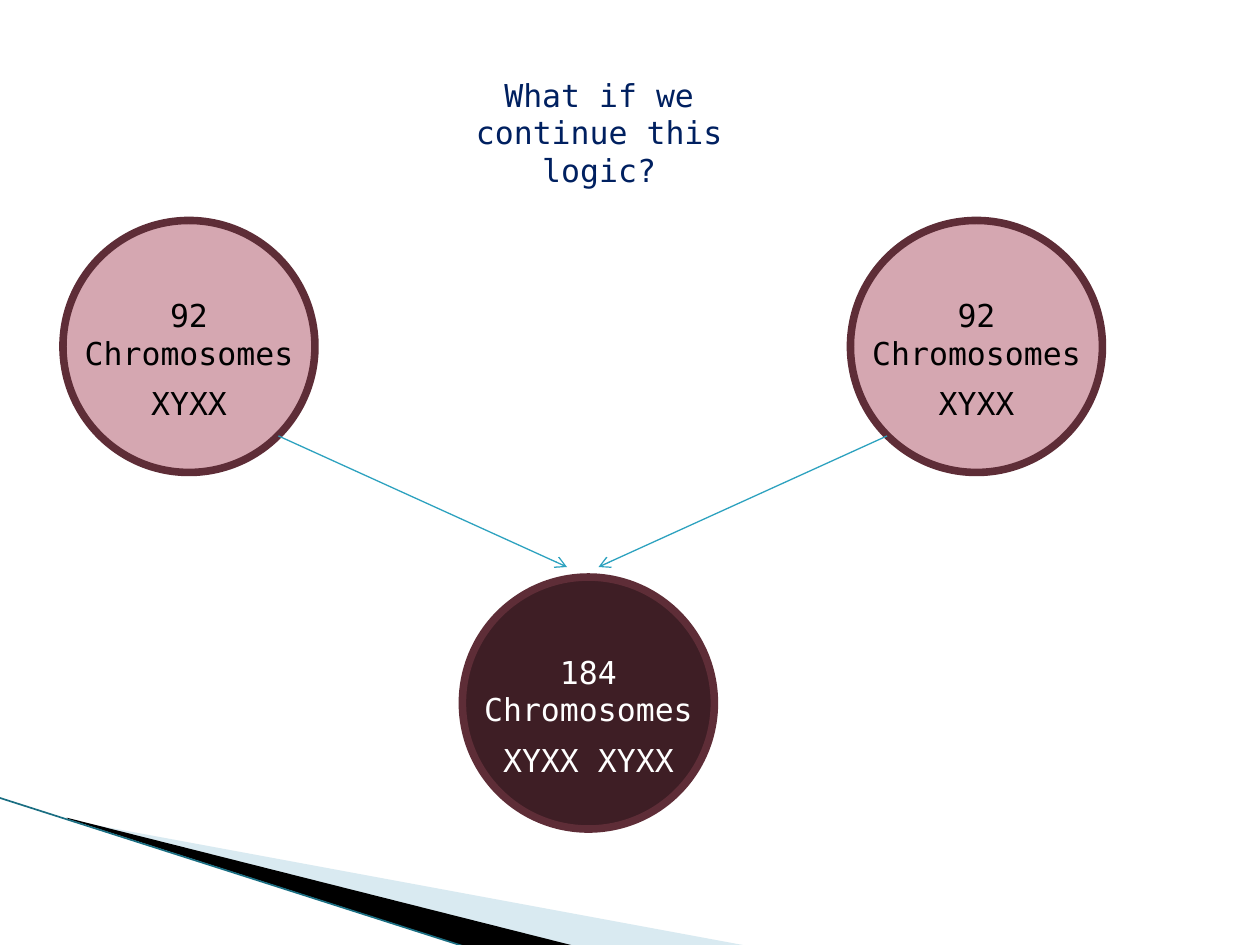
import pptx
import pptx.util
import pptx.dml.color
import pptx.enum.shapes
import pptx.enum.text
import pptx.oxml
import pptx.oxml.ns

RGBColor = pptx.dml.color.RGBColor
PX = 9144  # EMU in one px, 100 px to the inch
FONT = "DejaVu Sans Mono"
BLACK = RGBColor(0x00, 0x00, 0x00)
WHITE = RGBColor(0xFF, 0xFF, 0xFF)
NAVY = RGBColor(0x00, 0x20, 0x60)
PINK = RGBColor(0xD5, 0xA7, 0xB1)
MAROON = RGBColor(0x5E, 0x2D, 0x37)
DARK_MAROON = RGBColor(0x3E, 0x1E, 0x25)
PALE_BLUE = RGBColor(0xA0, 0xCB, 0xDC)
TEAL = RGBColor(0x2D, 0xA2, 0xBF)
DARK_TEAL = RGBColor(0x1A, 0x6E, 0x82)
CELL_SIZE = 200


def px(*lengths):
    return [pptx.util.Emu(length * PX) for length in lengths]


def add_xml_child(parent, tag, **attributes):
    child = pptx.oxml.parse_xml(f"<{tag} {pptx.oxml.ns.nsdecls('a')}/>")
    for name, value in attributes.items():
        child.set(name, value)
    parent.append(child)


def write_text(box, text, color):
    """Fill a box with one centred line of text that wraps at the box width."""
    frame = box.text_frame
    frame.word_wrap = True
    frame.auto_size = pptx.enum.text.MSO_AUTO_SIZE.SHAPE_TO_FIT_TEXT
    frame.vertical_anchor = pptx.enum.text.MSO_ANCHOR.TOP
    para = frame.paragraphs[0]
    para.alignment = pptx.enum.text.PP_ALIGN.CENTER
    para.line_spacing = 1.0
    span = para.add_run()
    span.text = text
    span.font.name = FONT
    span.font.size = pptx.util.Pt(18)
    span.font.color.rgb = color


def add_title(page, text):
    title = page.shapes.title
    title.left, title.top, title.width, title.height = px(342, 55, 267, 71)
    write_text(title, text, NAVY)


def add_label(page, left, top, width, height, text, color):
    box = page.shapes.add_textbox(*px(left, top, width, height))
    write_text(box, text, color)


def add_cell(page, left, top, count, sex, sex_width, fill, text_color):
    """Draw a round cell with its chromosome count and sex chromosomes."""
    cell = page.shapes.add_shape(pptx.enum.shapes.MSO_SHAPE.OVAL,
                                 *px(left, top, CELL_SIZE, CELL_SIZE))
    cell.shadow.inherit = False
    cell.fill.solid()
    cell.fill.fore_color.rgb = fill
    cell.line.color.rgb = MAROON
    cell.line.width = pptx.util.Pt(4.33)
    add_label(page, left, top + 55, CELL_SIZE, 71, count, text_color)
    sex_left = left + (CELL_SIZE - sex_width) // 2
    add_label(page, sex_left, top + 125, sex_width, 40, sex, text_color)


def add_line(page, start, end, color, width, arrow=False):
    line = page.shapes.add_connector(pptx.enum.shapes.MSO_CONNECTOR.STRAIGHT,
                                     *px(*start, *end))
    line.line.color.rgb = color
    line.line.width = pptx.util.Pt(width)
    if arrow:
        add_xml_child(line.line._get_or_add_ln(), "a:tailEnd", type="arrow")
    add_xml_child(line._element.spPr, "a:effectLst")


def add_wedge(page, points, color, opacity=100):
    builder = page.shapes.build_freeform(*points[0], scale=PX)
    builder.add_line_segments(points[1:], close=True)
    wedge = builder.convert_to_shape()
    wedge.shadow.inherit = False
    wedge.line.fill.background()
    wedge.fill.solid()
    wedge.fill.fore_color.rgb = color
    if opacity < 100:
        color_node = wedge._element.spPr.find(".//" + pptx.oxml.ns.qn("a:srgbClr"))
        add_xml_child(color_node, "a:alpha", val=str(opacity * 1000))


def add_corner_decoration(page):
    add_wedge(page, [(55, 651), (595, 751), (456, 751), (55, 650)], PALE_BLUE, 40)
    add_wedge(page, [(53, 649), (457, 751), (372, 752), (54, 650)], BLACK)
    add_line(page, (-1, 633), (371, 752), DARK_TEAL, 0.95)


def main():
    deck = pptx.Presentation()
    deck.slide_width, deck.slide_height = px(1000, 750)
    page = deck.slides.add_slide(deck.slide_layouts[5])

    add_corner_decoration(page)
    for left in (50, 675):
        add_cell(page, left, 175, "92 Chromosomes", "XYXX", 122, PINK, BLACK)
    for start, end in (((221, 346), (450, 450)), ((704, 346), (475, 450))):
        add_line(page, start, end, TEAL, 0.75, arrow=True)
    add_cell(page, 367, 458, "184 Chromosomes", "XYXX XYXX", CELL_SIZE,
             DARK_MAROON, WHITE)
    add_title(page, "What if we continue this logic?")

    deck.save("out.pptx")


if __name__ == "__main__":
    main()
